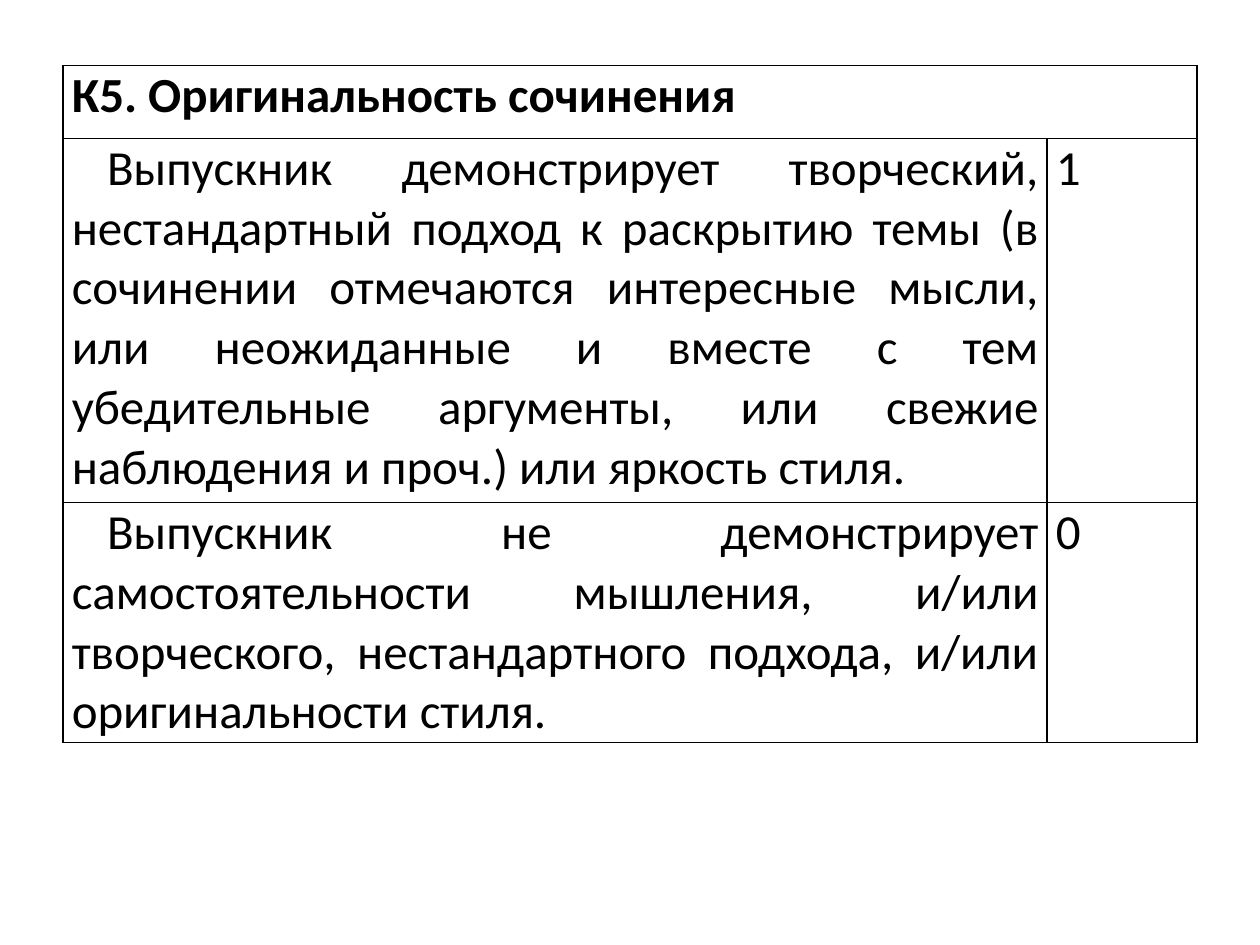
import pptx
import pptx.dml.color
import pptx.enum.text
import pptx.oxml
import pptx.oxml.ns
import pptx.util
from dataclasses import dataclass

Inches = pptx.util.Inches
Pt = pptx.util.Pt


@dataclass(frozen=True)
class Theme:
    font: str = "Calibri"
    text_size: int = 28
    ink: str = "000000"
    border_width: float = 1


THEME = Theme()

HEADING = "К5. Оригинальность сочинения"
CRITERIA = [
    ("Выпускник демонстрирует творческий, нестандартный подход к раскрытию темы "
     "(в сочинении отмечаются интересные мысли, или неожиданные и вместе с тем "
     "убедительные аргументы, или свежие наблюдения и проч.) или яркость стиля.", "1"),
    ("Выпускник не демонстрирует самостоятельности мышления, и/или творческого, "
     "нестандартного подхода, и/или оригинальности стиля.", "0"),
]
COLUMN_WIDTHS = [7.81, 1.19]
ROW_HEIGHTS = [0.58, 2.89, 1.89]


def style_cell(cell):
    """Clear the fill, set the margins and draw all four borders."""
    cell.fill.background()
    cell.margin_left = cell.margin_right = Inches(0.07)
    cell.margin_top = cell.margin_bottom = 0
    properties = cell._tc.get_or_add_tcPr()
    for position, side in enumerate(("lnL", "lnR", "lnT", "lnB")):
        border = pptx.oxml.parse_xml(
            f'<a:{side} {pptx.oxml.ns.nsdecls("a")} w="{Pt(THEME.border_width)}">'
            f'<a:solidFill><a:srgbClr val="{THEME.ink}"/></a:solidFill></a:{side}>')
        properties.insert(position, border)


def write_cell(cell, text, bold=False, indent=0):
    paragraph = cell.text_frame.paragraphs[0]
    paragraph.text = text
    paragraph.alignment = pptx.enum.text.PP_ALIGN.JUSTIFY
    paragraph.font.name = THEME.font
    paragraph.font.size = Pt(THEME.text_size)
    paragraph.font.bold = bold
    paragraph.font.color.rgb = pptx.dml.color.RGBColor.from_string(THEME.ink)
    if indent:
        paragraph_properties = paragraph._p.get_or_add_pPr()
        paragraph_properties.set("marL", "0")
        paragraph_properties.set("indent", str(Inches(indent)))


def add_criteria_table(slide):
    frame = slide.shapes.add_table(
        len(ROW_HEIGHTS), len(COLUMN_WIDTHS), Inches(0.5), Inches(0.52),
        Inches(sum(COLUMN_WIDTHS)), Inches(sum(ROW_HEIGHTS)))
    criteria = frame.table
    criteria.first_row = criteria.horz_banding = False
    for column, width in zip(criteria.columns, COLUMN_WIDTHS):
        column.width = Inches(width)
    for row, height in zip(criteria.rows, ROW_HEIGHTS):
        row.height = Inches(height)
    for cell in criteria.iter_cells():
        style_cell(cell)

    # Heading across both columns
    criteria.cell(0, 0).merge(criteria.cell(0, 1))
    write_cell(criteria.cell(0, 0), HEADING, bold=True)

    # Descriptions and their points
    for row_index, (description, points) in enumerate(CRITERIA, start=1):
        write_cell(criteria.cell(row_index, 0), description, indent=0.28)
        write_cell(criteria.cell(row_index, 1), points)


def main():
    presentation = pptx.Presentation()
    presentation.slide_width = Inches(10)
    presentation.slide_height = Inches(7.5)
    slide = presentation.slides.add_slide(presentation.slide_layouts[6])
    add_criteria_table(slide)
    presentation.save("out.pptx")


if __name__ == "__main__":
    main()
